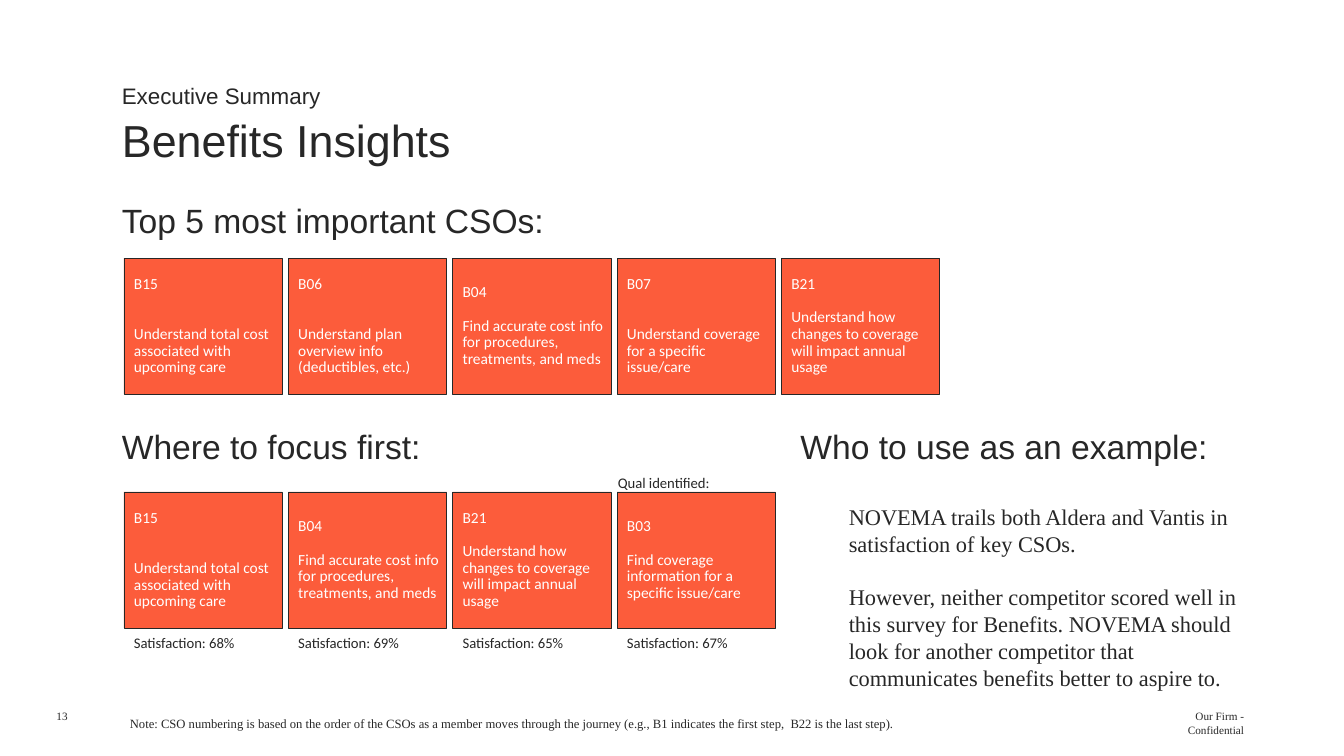
import dataclasses

import pptx
import pptx.dml.color
import pptx.enum.shapes
import pptx.enum.text
import pptx.util

Inches = pptx.util.Inches
Pt = pptx.util.Pt
Anchor = pptx.enum.text.MSO_ANCHOR
Align = pptx.enum.text.PP_ALIGN


@dataclasses.dataclass(frozen=True)
class Theme:
    ink: str = "272727"
    coral: str = "FC5C3B"
    white: str = "FFFFFF"
    sans: str = "Arial"
    serif: str = "Times New Roman"
    label: str = "Calibri"
    title_size: float = 32
    heading_size: float = 24
    body_size: float = 16
    card_size: float = 11
    label_size: float = 10.5
    note_size: float = 9
    footer_size: float = 8


@dataclasses.dataclass(frozen=True)
class Box:
    left: float
    top: float
    width: float
    height: float

    def lengths(self):
        return [Inches(side) for side in (self.left, self.top, self.width, self.height)]


THEME = Theme()
CARD_PITCH = 1.63
CARD_WIDTH = 1.57
CARD_HEIGHT = 1.35
CARD_LINE = 12

TOTAL_COST = ("B15", "Understand total cost associated with upcoming care", 2)
PLAN_OVERVIEW = ("B06", "Understand plan overview info (deductibles, etc.)", 2)
ACCURATE_COST = ("B04", "Find accurate cost info for procedures, treatments, and meds", 1)
SPECIFIC_COVERAGE = ("B07", "Understand coverage for a specific issue/care", 2)
COVERAGE_CHANGES = ("B21", "Understand how changes to coverage will impact annual usage", 1)
COVERAGE_INFO = ("B03", "Find coverage information for a specific issue/care", 1)

TOP_CARDS = [TOTAL_COST, PLAN_OVERVIEW, ACCURATE_COST, SPECIFIC_COVERAGE, COVERAGE_CHANGES]
FOCUS_CARDS = [
    (TOTAL_COST, "68%"),
    (ACCURATE_COST, "69%"),
    (COVERAGE_CHANGES, "65%"),
    (COVERAGE_INFO, "67%"),
]
EXAMPLE_TEXT = (
    "NOVEMA trails both Aldera and Vantis in satisfaction of key CSOs.\n"
    "However, neither competitor scored well in this survey for Benefits. "
    "NOVEMA should look for another competitor that communicates benefits "
    "better to aspire to."
)
NOTE_TEXT = (
    "Note: CSO numbering is based on the order of the CSOs as a member moves "
    "through the journey (e.g., B1 indicates the first step,  B22 is the last step)."
)


def rgb(value):
    return pptx.dml.color.RGBColor.from_string(value)


def fill_text(frame, text, font, size, color=THEME.ink, align=Align.LEFT):
    frame.text = text
    frame.word_wrap = True
    frame.auto_size = pptx.enum.text.MSO_AUTO_SIZE.NONE
    for para in frame.paragraphs:
        para.alignment = align
        for span in para.runs:
            span.font.name = font
            span.font.size = Pt(size)
            span.font.color.rgb = rgb(color)


def set_margins(frame, left, top, right, bottom):
    frame.margin_left, frame.margin_top = Inches(left), Inches(top)
    frame.margin_right, frame.margin_bottom = Inches(right), Inches(bottom)


def add_text(page, box, text, font, size, align=Align.LEFT):
    frame = page.shapes.add_textbox(*box.lengths()).text_frame
    fill_text(frame, text, font, size, align=align)
    return frame


def add_heading(page, box, text):
    add_text(page, box, text, THEME.sans, THEME.heading_size)


def add_header(page, box):
    eyebrow = Box(box.left, box.top, 3.89, 0.37)
    add_text(page, eyebrow, "Executive Summary", THEME.sans, THEME.body_size)
    title = page.shapes.title
    title.left, title.top, title.width, title.height = Box(
        box.left, box.top + 0.29, box.width, 0.64
    ).lengths()
    fill_text(title.text_frame, "Benefits Insights", THEME.sans, THEME.title_size)
    title.text_frame.vertical_anchor = Anchor.BOTTOM


def add_card(page, box, card):
    code, outcome, gap_lines = card
    shape = page.shapes.add_shape(pptx.enum.shapes.MSO_SHAPE.RECTANGLE, *box.lengths())
    shape.shadow.inherit = False
    shape.fill.solid()
    shape.fill.fore_color.rgb = rgb(THEME.coral)
    shape.line.color.rgb = rgb(THEME.ink)
    shape.line.width = Pt(0.5)
    frame = shape.text_frame
    fill_text(frame, f"{code}\n{outcome}", THEME.label, THEME.card_size, THEME.white)
    set_margins(frame, 0.1, 0.06, 0.06, 0.06)
    frame.vertical_anchor = Anchor.MIDDLE
    for para in frame.paragraphs:
        para.line_spacing = 0.9
    frame.paragraphs[1].space_before = Pt(gap_lines * CARD_LINE)


def card_box(row, index):
    return Box(row.left + index * CARD_PITCH, row.top, CARD_WIDTH, CARD_HEIGHT)


def add_top_outcomes(page, box):
    add_heading(page, Box(box.left, box.top, 7.62, 0.5), "Top 5 most important CSOs:")
    row = Box(box.left + 0.12, box.top + 0.63, box.width, CARD_HEIGHT)
    for index, card in enumerate(TOP_CARDS):
        add_card(page, card_box(row, index), card)


def add_label(page, left, top, text):
    add_text(page, Box(left, top, 1.36, 0.28), text, THEME.label, THEME.label_size)


def add_focus(page, box):
    add_heading(page, Box(box.left, box.top, 3.45, 0.5), "Where to focus first:")
    row = Box(box.left + 0.12, box.top + 0.7, box.width, CARD_HEIGHT)
    for index, (card, satisfaction) in enumerate(FOCUS_CARDS):
        place = card_box(row, index)
        add_card(page, place, card)
        add_label(page, place.left, place.top + 1.36, f"Satisfaction: {satisfaction}")
    add_label(page, place.left - 0.09, place.top - 0.23, "Qual identified:")


def add_example(page, box):
    add_heading(page, Box(box.left, box.top, 4.27, 0.5), "Who to use as an example:")
    body = Box(box.left + 0.48, box.top + 0.76, box.width - 0.48, 1.99)
    frame = add_text(page, body, EXAMPLE_TEXT, THEME.serif, THEME.body_size)
    frame.paragraphs[1].space_before = Pt(19)


def add_footer(page, box):
    number = Box(box.left, box.top, 0.3, 0.13)
    owner = Box(box.left + box.width - 0.6, box.top, 0.6, 0.26)
    for place, text, align in (
        (number, "13", Align.LEFT),
        (owner, "Our Firm - Confidential", Align.RIGHT),
    ):
        frame = add_text(page, place, text, THEME.serif, THEME.footer_size, align)
        set_margins(frame, 0, 0, 0, 0)
    note = Box(box.left + 0.63, box.top + 0.01, 8.83, 0.37)
    add_text(page, note, NOTE_TEXT, THEME.serif, THEME.note_size)


def main():
    deck = pptx.Presentation()
    deck.slide_width, deck.slide_height = Inches(13.33), Inches(7.5)
    page = deck.slides.add_slide(deck.slide_layouts[5])
    add_header(page, Box(1.11, 0.77, 11.09, 0.93))
    add_top_outcomes(page, Box(1.11, 1.93, 8.22, 1.98))
    add_focus(page, Box(1.11, 4.18, 6.59, 2.35))
    add_example(page, Box(7.84, 4.18, 4.61, 2.75))
    add_footer(page, Box(0.56, 7.04, 11.78, 0.38))
    deck.save("out.pptx")


if __name__ == "__main__":
    main()
